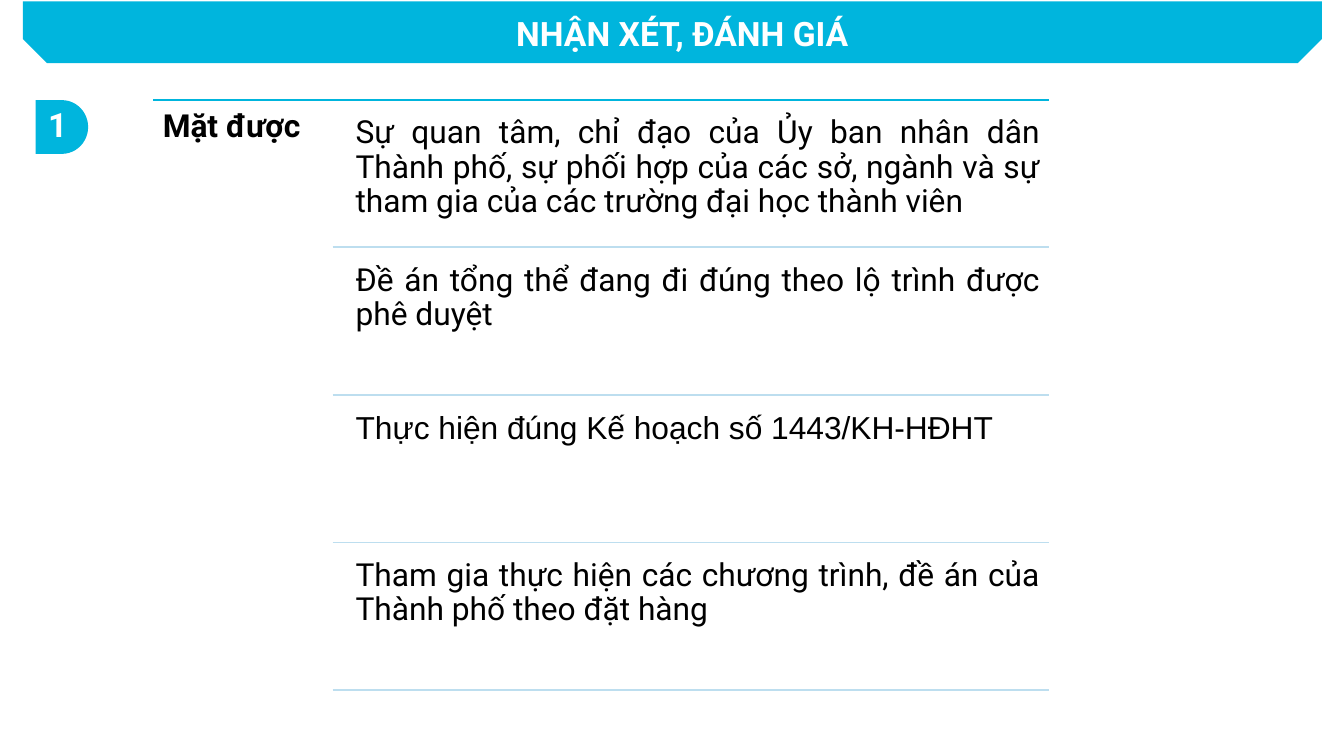
"""Builds the assessment slide listing the achievements so far."""
import pptx
import pptx.dml.color
import pptx.enum.shapes
import pptx.enum.text
import pptx.oxml
import pptx.util

Pt = pptx.util.Pt
ALIGN = pptx.enum.text.PP_ALIGN
SHAPE = pptx.enum.shapes.MSO_SHAPE
CYAN, PALE, WHITE, BLACK = "00B5DD", "BDDEEF", "FFFFFF", "000000"
EMPTY_EFFECTS = '<a:effectLst xmlns:a="http://schemas.openxmlformats.org/drawingml/2006/main"/>'


def paint(color_format, color):
    color_format.rgb = pptx.dml.color.RGBColor.from_string(color)


def write(box, text, size, color, bold=False, font="Roboto", align=ALIGN.LEFT):
    left, top, width, height = box
    frame = slide.shapes.add_textbox(Pt(left), Pt(top), Pt(width), Pt(height)).text_frame
    frame.word_wrap = True
    paragraph = frame.paragraphs[0]
    paragraph.alignment = align
    run = paragraph.add_run()
    run.text = text
    run.font.name, run.font.size, run.font.bold = font, Pt(size), bold
    paint(run.font.color, color)
    return frame


prs = pptx.Presentation()
prs.slide_width, prs.slide_height = Pt(1440), Pt(810)
slide = prs.slides.add_slide(prs.slide_layouts[6])

banner = slide.shapes.add_shape(
    SHAPE.SNIP_2_SAME_RECTANGLE, Pt(24.5), Pt(1.4), Pt(1391.8), Pt(66.2))
banner.adjustments[0], banner.adjustments[1] = 0, 0.39
badge = slide.shapes.add_shape(
    SHAPE.FLOWCHART_DELAY, Pt(38.2), Pt(107.3), Pt(56.2), Pt(57.6))
for part in (banner, badge):
    part.shadow.inherit = False
    part.fill.solid()
    paint(part.fill.fore_color, CYAN)
    part.line.fill.background()

title = write((40.3, 10.8, 1381.7, 51.1), "NHẬN XÉT, ĐÁNH GIÁ", 36, WHITE, True,
              align=ALIGN.CENTER)
number = write((44.6, 107.3, 56.2, 51.1), "1", 36, WHITE, True)
for frame in (title, number):
    frame.auto_size = pptx.enum.text.MSO_AUTO_SIZE.SHAPE_TO_FIT_TEXT

heading = write((164.2, 107.3, 192.2, 640.1), "Mặt được", 34, BLACK, True)

achievements = [
    ("Sự quan tâm, chỉ đạo của Ủy ban nhân dân Thành phố, sự phối hợp của các sở, "
     "ngành và sự tham gia của các trường đại học thành viên", "Roboto"),
    ("Đề án tổng thể đang đi đúng theo lộ trình được phê duyệt", "Roboto"),
    ("Thực hiện đúng Kế hoạch số 1443/KH-HĐHT", "Arial"),
    ("Tham gia thực hiện các chương trình, đề án của Thành phố theo đặt hàng", "Roboto"),
]
row_pitch = 158.1
body_frames = [heading]
rules = [(164.2, 107.3, CYAN)]
for row, (achievement, font) in enumerate(achievements):
    body_frames.append(write((370.8, 114.6 + row * row_pitch, 753.8, 150.5), achievement,
                             34, BLACK, font=font, align=ALIGN.JUSTIFY))
    rules.append((356.4, 265.1 + row * row_pitch, PALE))

for frame in body_frames:
    frame.margin_left = frame.margin_right = Pt(10.2)
    frame.margin_top = frame.margin_bottom = Pt(10.2)
    frame.paragraphs[0].line_spacing = 0.9

for left, y, color in rules:
    rule = slide.shapes.add_connector(
        pptx.enum.shapes.MSO_CONNECTOR.STRAIGHT, Pt(left), Pt(y), Pt(1124), Pt(y))
    rule.line.width = Pt(2)
    paint(rule.line.color, color)
    rule._element.spPr.append(pptx.oxml.parse_xml(EMPTY_EFFECTS))

prs.save("out.pptx")
